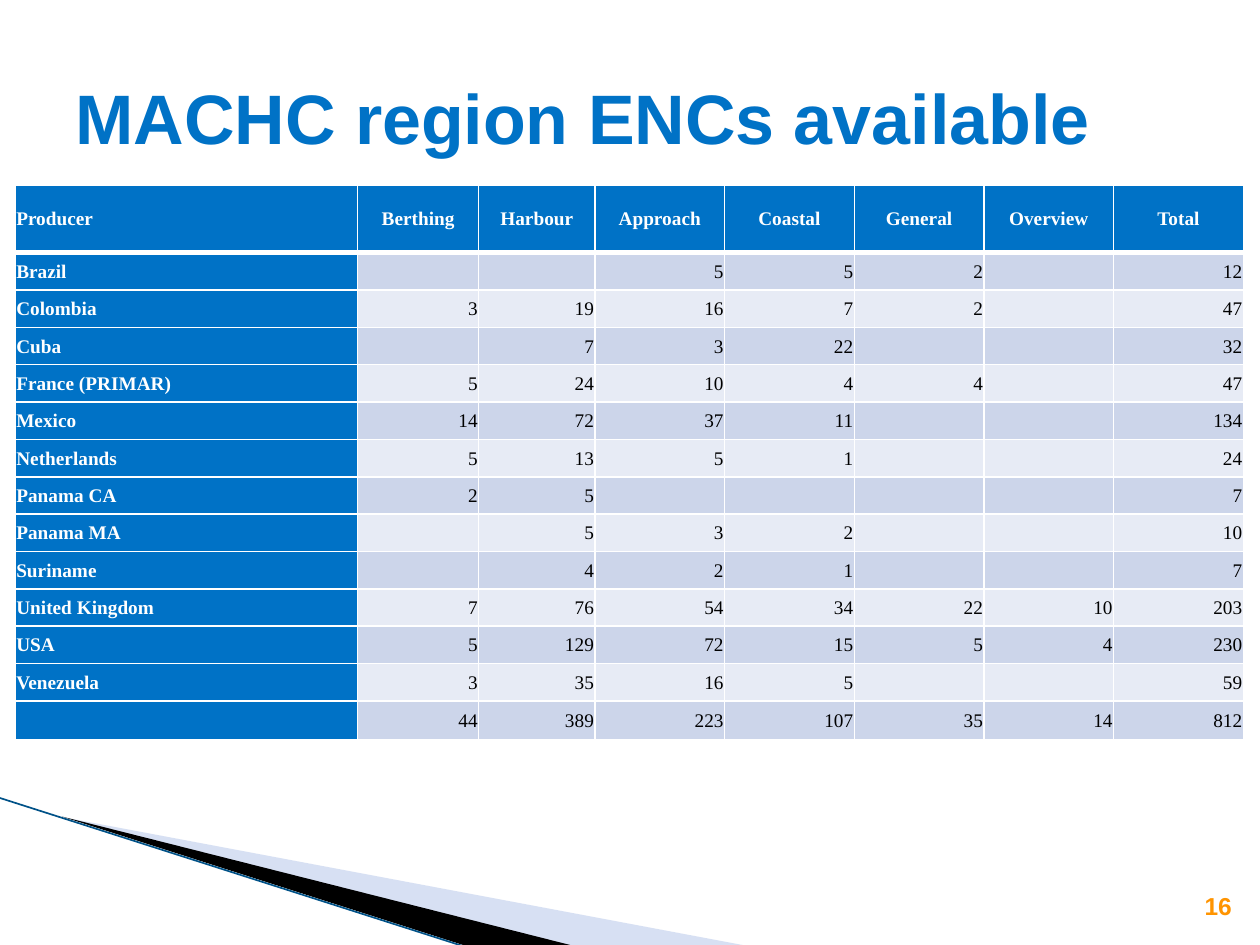
from lxml import etree
from pptx import Presentation
from pptx.dml.color import RGBColor
from pptx.enum import shapes, text
from pptx.oxml import ns
from pptx.util import Pt

BLUE = RGBColor(0x00, 0x72, 0xC6)
NAVY = RGBColor(0x00, 0x52, 0x88)
PALE = RGBColor(0x9D, 0xB3, 0xE1)
DARK = RGBColor(0xCC, 0xD5, 0xEA)
LIGHT = RGBColor(0xE7, 0xEB, 0xF5)
WHITE = RGBColor(0xFF, 0xFF, 0xFF)
BLACK = RGBColor(0x00, 0x00, 0x00)
AMBER = RGBColor(0xFF, 0x94, 0x00)

# Content
TITLE = "MACHC region ENCs available"
PAGE = "16"
HEAD = ["Producer", "Berthing", "Harbour", "Approach", "Coastal",
        "General", "Overview", "Total"]
DATA = [
    ("Brazil", "", "", 5, 5, 2, "", 12),
    ("Colombia", 3, 19, 16, 7, 2, "", 47),
    ("Cuba", "", 7, 3, 22, "", "", 32),
    ("France (PRIMAR)", 5, 24, 10, 4, 4, "", 47),
    ("Mexico", 14, 72, 37, 11, "", "", 134),
    ("Netherlands", 5, 13, 5, 1, "", "", 24),
    ("Panama CA", 2, 5, "", "", "", "", 7),
    ("Panama MA", "", 5, 3, 2, "", "", 10),
    ("Suriname", "", 4, 2, 1, "", "", 7),
    ("United Kingdom", 7, 76, 54, 34, 22, 10, 203),
    ("USA", 5, 129, 72, 15, 5, 4, 230),
    ("Venezuela", 3, 35, 16, 5, "", "", 59),
    ("", 44, 389, 223, 107, 35, 14, 812),
]
ROWS = [HEAD] + DATA
COLS = [195.7, 69.2, 66.4] + [74.1] * 5
TALL = [38.8] + [21.37] * (len(DATA) - 1) + [22.3]
# Corner wedges: points, frame, fill, opacity in percent
WEDGES = [
    ([(36, 467), (424.4, 540), (324.4, 540)],
     (56.2, 393.8, 299.5, 113.8), PALE, 40),
    ([(35.4, 466.6), (325.8, 540), (264.6, 540)],
     (-4.3, 455.8, 299.5, 66.2), BLACK, 100),
]


def style(obj, vals):
    for name, val in vals.items():
        setattr(obj, name, val)


def write(frame, words, align, font, color, box):
    style(frame, box)
    para = frame.paragraphs[0]
    para.alignment = align
    if words == "":
        etree.SubElement(para._p, ns.qn("a:endParaRPr"),
                         sz=str(int(font["size"].pt * 100)))
        return
    run = para.add_run()
    run.text = str(words)
    style(run.font, font)
    run.font.color.rgb = color


def edge(cell, side, width):
    line = etree.SubElement(cell._tc.get_or_add_tcPr(), ns.qn("a:" + side),
                            w=str(Pt(width)))
    fill = etree.SubElement(line, ns.qn("a:solidFill"))
    etree.SubElement(fill, ns.qn("a:srgbClr"), val=str(WHITE))


def reframe(shape, frame):
    """Change the frame while the outline stays where it is."""
    left, top, width, height = (Pt(n) for n in frame)
    shift = {"x": shape.left - left, "y": shape.top - top}
    for dot in shape._element.spPr.iter(ns.qn("a:pt")):
        for axis, gap in shift.items():
            dot.set(axis, str(int(dot.get(axis)) + gap))
    for line in shape._element.spPr.iter(ns.qn("a:path")):
        line.set("w", str(width))
        line.set("h", str(height))
    style(shape, dict(left=left, top=top, width=width, height=height))


def wedge(slide, points, frame, color, alpha):
    dots = [(Pt(x), Pt(y)) for x, y in points]
    build = slide.shapes.build_freeform(*dots[0])
    build.add_line_segments(dots[1:], close=True)
    shape = build.convert_to_shape()
    reframe(shape, frame)
    shape.shadow.inherit = False
    shape.fill.solid()
    shape.fill.fore_color.rgb = color
    shape.line.fill.background()
    if alpha < 100:
        tint = shape._element.spPr.find(".//" + ns.qn("a:srgbClr"))
        etree.SubElement(tint, ns.qn("a:alpha"), val=str(alpha * 1000))


def fill_cell(cell, words, row, col):
    left, center, right = (text.PP_ALIGN.LEFT, text.PP_ALIGN.CENTER,
                           text.PP_ALIGN.RIGHT)
    label = row == 0 or col == 0
    align = left if col == 0 else center if row == 0 else right
    style(cell, dict(margin_left=Pt(0.6), margin_right=Pt(0.6),
                     margin_top=Pt(0.6), margin_bottom=Pt(0),
                     vertical_anchor=text.MSO_ANCHOR.MIDDLE))
    for side in ("lnL", "lnR", "lnT", "lnB"):
        thick = (row, side) in ((0, "lnB"), (1, "lnT"))
        edge(cell, side, 3 if thick else 1)
    cell.fill.solid()
    cell.fill.fore_color.rgb = BLUE if label else DARK if row % 2 else LIGHT
    write(cell.text_frame, words, align,
          dict(name="Times New Roman", size=Pt(11), bold=label),
          WHITE if label else BLACK, {})


def main():
    deck = Presentation()
    style(deck, dict(slide_width=Pt(720), slide_height=Pt(540)))
    slide = deck.slides.add_slide(deck.slide_layouts[5])

    # Corner decoration
    for item in WEDGES:
        wedge(slide, *item)
    rule = slide.shapes.add_connector(shapes.MSO_CONNECTOR.STRAIGHT,
                                      Pt(-0.7), Pt(455.8), Pt(264.5), Pt(540.6))
    rule.line.color.rgb = NAVY
    rule.line.width = Pt(0.95)
    etree.SubElement(rule._element.spPr, ns.qn("a:effectLst"))

    # Table of chart counts
    table = slide.shapes.add_table(len(ROWS), len(COLS), Pt(8.7), Pt(105.6),
                                   Pt(sum(COLS)), Pt(sum(TALL))).table
    for col, width in zip(table.columns, COLS):
        col.width = Pt(width)
    for row, height in zip(table.rows, TALL):
        row.height = Pt(height)
    for r, row in enumerate(ROWS):
        for c, words in enumerate(row):
            fill_cell(table.cell(r, c), words, r, c)

    # Title, above the table
    title = slide.shapes.title
    style(title, dict(left=Pt(36), top=Pt(21.6), width=Pt(648), height=Pt(90)))
    write(title.text_frame, TITLE, text.PP_ALIGN.LEFT,
          dict(name="Arial", size=Pt(40), bold=True), BLUE,
          dict(vertical_anchor=text.MSO_ANCHOR.MIDDLE, word_wrap=True))
    slide.shapes._spTree.append(title._element)

    # Slide number
    page = slide.shapes.add_textbox(Pt(675), Pt(500.8), Pt(36), Pt(28.8))
    write(page.text_frame, PAGE, text.PP_ALIGN.RIGHT,
          dict(name="Arial", size=Pt(14), bold=True), AMBER,
          dict(vertical_anchor=text.MSO_ANCHOR.BOTTOM, word_wrap=True,
               margin_left=Pt(0), margin_right=Pt(7.2)))

    deck.save("out.pptx")


if __name__ == "__main__":
    main()
